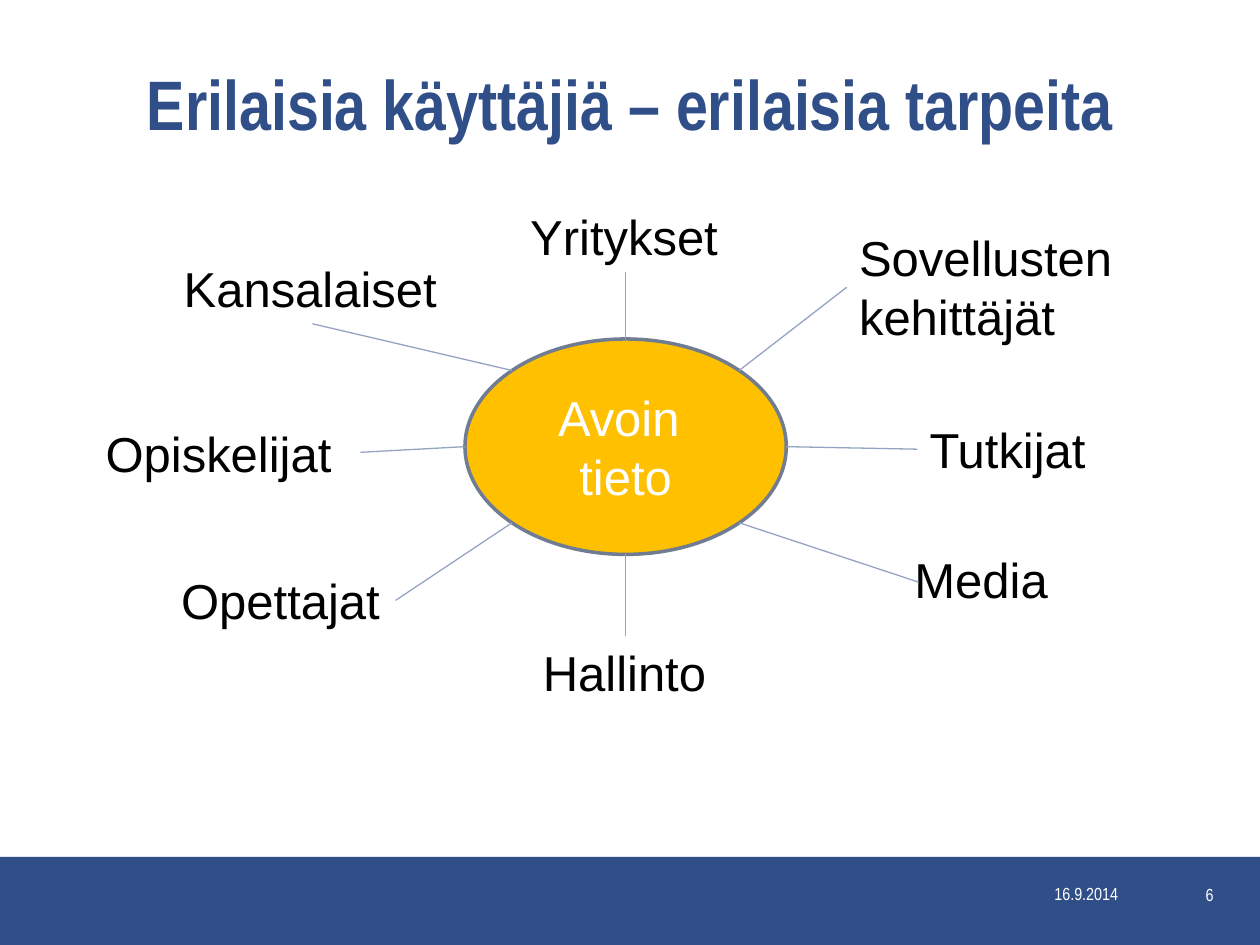
"""Builds a slide that maps the user groups around open data."""
import math

import pptx
import pptx.dml.color
import pptx.enum.shapes
import pptx.enum.text
import pptx.oxml.ns
import pptx.util
from lxml import etree

Inches = pptx.util.Inches
ALIGN = pptx.enum.text.PP_ALIGN
ANCHOR = pptx.enum.text.MSO_ANCHOR
SHAPE = pptx.enum.shapes.MSO_SHAPE
BLUE, WHITE, BLACK = "304E88", "FFFFFF", "000000"
HUB = (3.69, 2.69, 2.55, 1.71)
TOP, LEFT, BOTTOM, RIGHT = range(4)

# text, box, wrap, angle on the hub, joined side of the box or free line end
USERS = [
    ("Sovellusten\nkehittäjät", (6.72, 1.76, 2.34, 1.04), False, -45, LEFT),
    ("Yritykset", (4.11, 1.59, 1.71, 0.57), True, -90, BOTTOM),
    ("Kansalaiset", (1.36, 2, 2.24, 0.57), False, -135, BOTTOM),
    ("Opiskelijat", (0.74, 3.31, 2.02, 0.57), False, 180, (2.86, 3.59)),
    ("Opettajat", (1.34, 4.48, 1.8, 0.57), False, 135, RIGHT),
    ("Hallinto", (4.21, 5.05, 1.51, 0.57), False, 90, TOP),
    ("Tutkijat", (7.28, 3.28, 1.45, 0.57), False, 0, LEFT),
    ("Media", (7.16, 4.31, 1.27, 0.57), False, 45, (7.29, 4.62)),
]


def color(hex_string):
    """Return the colour for a hex string."""
    return pptx.dml.color.RGBColor.from_string(hex_string)


def write(frame, text, size, font, ink, align=ALIGN.LEFT, bold=False):
    """Write each line of text as a paragraph with one run."""
    for index, line in enumerate(text.split("\n")):
        paragraph = frame.add_paragraph() if index else frame.paragraphs[0]
        paragraph.alignment = align
        run = paragraph.add_run()
        run.text = line
        run.font.size = pptx.util.Pt(size)
        run.font.name = font
        run.font.bold = bold
        run.font.color.rgb = color(ink)


def add_text(slide, box, text, size, font, ink, wrap=True,
             anchor=ANCHOR.TOP, **style):
    """Add a text box and return it."""
    label = slide.shapes.add_textbox(*map(Inches, box))
    label.text_frame.word_wrap = wrap
    label.text_frame.vertical_anchor = anchor
    write(label.text_frame, text, size, font, ink, **style)
    return label


def add_filled(slide, kind, box, fill):
    """Add a flat filled shape without outline and return it."""
    shape = slide.shapes.add_shape(kind, *map(Inches, box))
    shape.shadow.inherit = False
    shape.fill.solid()
    shape.fill.fore_color.rgb = color(fill)
    shape.line.fill.background()
    return shape


def add_hub(slide):
    """Add the central ellipse."""
    hub = add_filled(slide, SHAPE.OVAL, HUB, "FFC000")
    hub.line.color.rgb = color("707C91")
    hub.line.width = pptx.util.Pt(2)
    hub.text_frame.vertical_anchor = ANCHOR.MIDDLE
    write(hub.text_frame, "Avoin \ntieto", 28, "Arial", WHITE, ALIGN.CENTER)


def hub_point(angle):
    """Return the point on the hub's edge at an angle in degrees."""
    left, top, width, height = HUB
    turn = math.radians(angle)
    return (left + width / 2 * (1 + math.cos(turn)),
            top + height / 2 * (1 + math.sin(turn)))


def add_spoke(slide, angle, label, target):
    """Draw a line from the hub to a side of the label or to a free point."""
    start = hub_point(angle)
    end = target if isinstance(target, tuple) else start
    spoke = slide.shapes.add_connector(
        pptx.enum.shapes.MSO_CONNECTOR.STRAIGHT, *map(Inches, start + end))
    if not isinstance(target, tuple):
        spoke.end_connect(label, target)
    spoke.line.color.rgb = color("94A3C1")
    spoke.line.width = pptx.util.Pt(0.75)
    properties = spoke._element.spPr
    etree.SubElement(properties, pptx.oxml.ns.qn("a:effectLst"))


def add_user(slide, text, box, wrap, angle, target):
    """Add a user group's label with its spoke."""
    label = add_text(slide, box, text, 28, "Arial", BLACK, wrap)
    label.text_frame.auto_size = pptx.enum.text.MSO_AUTO_SIZE.SHAPE_TO_FIT_TEXT
    add_spoke(slide, angle, label, target)


def add_footer(slide):
    """Add the bottom band with the slide number and the date."""
    add_filled(slide, SHAPE.RECTANGLE, (0, 6.8, 10, 0.7), BLUE)
    add_text(slide, (9.2, 6.97, 0.53, 0.23), "6", 10, "Arial Narrow", WHITE,
             align=ALIGN.RIGHT)
    add_text(slide, (8.27, 6.97, 0.93, 0.24), "16.9.2014", 10, "Arial Narrow",
             WHITE, anchor=ANCHOR.MIDDLE)


def main():
    """Build and save the slide."""
    deck = pptx.Presentation()
    deck.slide_width, deck.slide_height = Inches(10), Inches(7.5)
    slide = deck.slides.add_slide(deck.slide_layouts[6])
    add_footer(slide)
    add_text(slide, (0.65, 0.26, 8.7, 1.1),
             "Erilaisia käyttäjiä – erilaisia tarpeita", 40, "Arial Narrow",
             BLUE, anchor=ANCHOR.MIDDLE, align=ALIGN.CENTER, bold=True)
    add_hub(slide)
    for user in USERS:
        add_user(slide, *user)
    deck.save("out.pptx")


if __name__ == "__main__":
    main()
